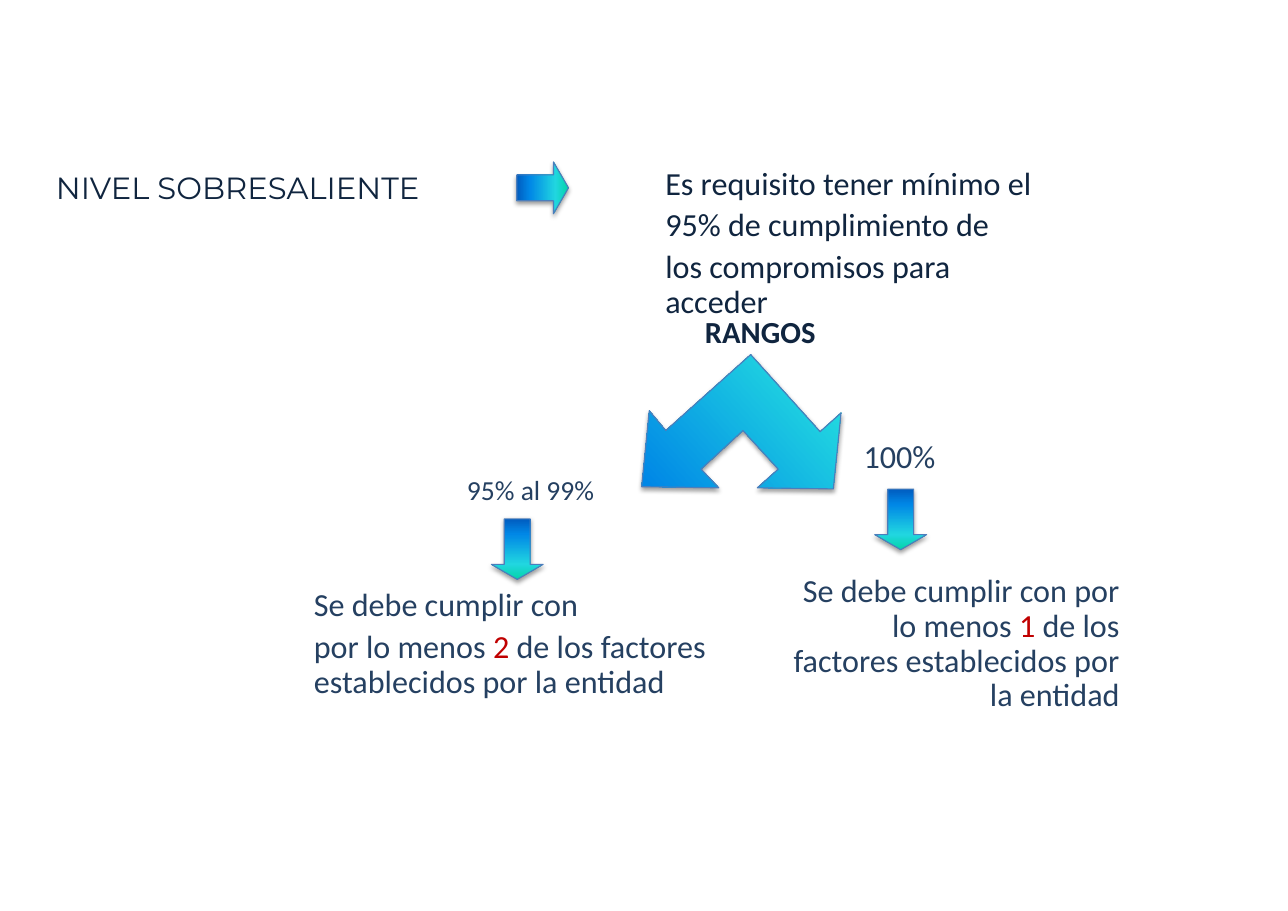
from math import cos, radians, sin

from lxml.etree import SubElement
from pptx import Presentation
from pptx.dml.color import RGBColor
from pptx.enum.shapes import MSO_SHAPE as Shape
from pptx.enum.text import MSO_AUTO_SIZE as AutoSize, PP_ALIGN as Align
from pptx.oxml.ns import qn
from pptx.util import Pt

PX = 9144  # EMU per px, 100 px to the inch
SLIDE_SIZE = (1169, 827)

NAVY = RGBColor(0x10, 0x25, 0x3F)
BLUE = RGBColor(0x25, 0x40, 0x61)
RED = RGBColor(0xC0, 0x00, 0x00)
OUTLINE = RGBColor(0x4B, 0x7E, 0xBC)
GRADIENT = [
    (0, RGBColor(0x03, 0xD4, 0xA8)),
    (25, RGBColor(0x21, 0xD6, 0xE0)),
    (75, RGBColor(0x00, 0x87, 0xE6)),
    (100, RGBColor(0x00, 0x5C, 0xBF)),
]

TITLE = {"name": "Montserrat", "size": Pt(20)}
BODY = {"name": "Calibri", "size": Pt(21)}
HEADING = {"name": "Calibri", "size": Pt(20), "bold": True}
SMALL = {"name": "Calibri", "size": Pt(18)}

# box (left, top, width, height), font, colour, alignment, paragraphs;
# the runs of a paragraph alternate between the colour and red
TEXTS = [
    ((41, 152, 388, 124), TITLE, NAVY, Align.LEFT, [["NIVEL SOBRESALIENTE"]]),
    ((594, 147, 374, 103), BODY, NAVY, Align.LEFT, [
        ["Es requisito tener mínimo el"],
        ["95% de cumplimiento de"],
        ["los compromisos para acceder"],
    ]),
    ((630, 283, 143, 41), HEADING, NAVY, Align.LEFT, [["RANGOS"]]),
    ((414, 428, 158, 38), SMALL, BLUE, Align.LEFT, [["95% al 99%"]]),
    ((774, 395, 88, 38), BODY, BLUE, Align.LEFT, [["100%"]]),
    ((275, 530, 388, 113), BODY, BLUE, Align.LEFT, [
        ["Se debe cumplir con"],
        ["por lo menos ", "2 ", "de los factores establecidos por la entidad"],
    ]),
    ((700, 517, 326, 138), BODY, BLUE, Align.RIGHT, [
        ["Se debe cumplir con por lo menos ", "1",
         " de los factores establecidos por la entidad"],
    ]),
]

# box, rotation
ARROWS = [
    ((469, 147, 47, 47), 270),
    ((446, 471, 47, 55), 0),
    ((794, 444, 47, 55), 0),
]

FORK_TURN = 228
FORK_CENTRE = (672.5, 408)
FORK_POINTS = [
    (582, 441), (652, 442), (636, 425), (674, 390), (706, 425), (687, 442),
    (756, 443), (763, 374), (744, 391), (681, 321), (604, 390), (589, 372),
]


def emu(lengths):
    return [round(length * PX) for length in lengths]


def add_text(slide, box, font, colour, alignment, paragraphs):
    frame = slide.shapes.add_textbox(*emu(box)).text_frame
    frame.word_wrap = True
    frame.auto_size = AutoSize.SHAPE_TO_FIT_TEXT
    for index, runs in enumerate(paragraphs):
        paragraph = frame.add_paragraph() if index else frame.paragraphs[0]
        paragraph.alignment = alignment
        paragraph.line_spacing = 0.9
        if index:
            paragraph.space_before = Pt(4.6)
        for position, text in enumerate(runs):
            run = paragraph.add_run()
            run.text = text
            for name, value in font.items():
                setattr(run.font, name, value)
            run.font.color.rgb = RED if position % 2 else colour


def add_colour(parent, colour):
    return SubElement(parent, qn("a:srgbClr"), val=str(colour))


def style_arrow(shape, rotation):
    """Give an arrow its turn, gradient, outline and soft shadow."""
    shape.rotation = rotation
    shape.fill.gradient()
    shape.fill.gradient_angle = 90
    stops = shape.element.spPr.find(".//" + qn("a:gsLst"))
    stops[:] = []
    for percent, colour in GRADIENT:
        stop = SubElement(stops, qn("a:gs"), pos=str(percent * 1000))
        add_colour(stop, colour)
    shape.line.color.rgb = OUTLINE
    shape.line.width = Pt(0.75)
    shape.shadow.inherit = False
    effects = shape.element.spPr.find(qn("a:effectLst"))
    shadow = SubElement(effects, qn("a:outerShdw"), blurRad=str(Pt(3.1)),
                        dist=str(Pt(1.6)), dir="5400000", rotWithShape="0")
    SubElement(add_colour(shadow, RGBColor(0, 0, 0)), qn("a:alpha"), val="38000")


def turn_back(point):
    """Where a point of the fork lies before the shape is rotated."""
    angle = radians(-FORK_TURN)
    x, y = (value - centre for value, centre in zip(point, FORK_CENTRE))
    return emu((FORK_CENTRE[0] + x * cos(angle) - y * sin(angle),
                FORK_CENTRE[1] + x * sin(angle) + y * cos(angle)))


def add_fork(slide):
    start, *others = map(turn_back, FORK_POINTS)
    builder = slide.shapes.build_freeform(*start)
    builder.add_line_segments(others, close=True)
    style_arrow(builder.convert_to_shape(), FORK_TURN)


def main():
    presentation = Presentation()
    presentation.slide_width, presentation.slide_height = emu(SLIDE_SIZE)
    slide = presentation.slides.add_slide(presentation.slide_layouts[6])
    for text in TEXTS:
        add_text(slide, *text)
    add_fork(slide)
    for box, rotation in ARROWS:
        arrow = slide.shapes.add_shape(Shape.DOWN_ARROW, *emu(box))
        arrow.adjustments[1] = 0.29
        style_arrow(arrow, rotation)
    presentation.save("out.pptx")


if __name__ == "__main__":
    main()
